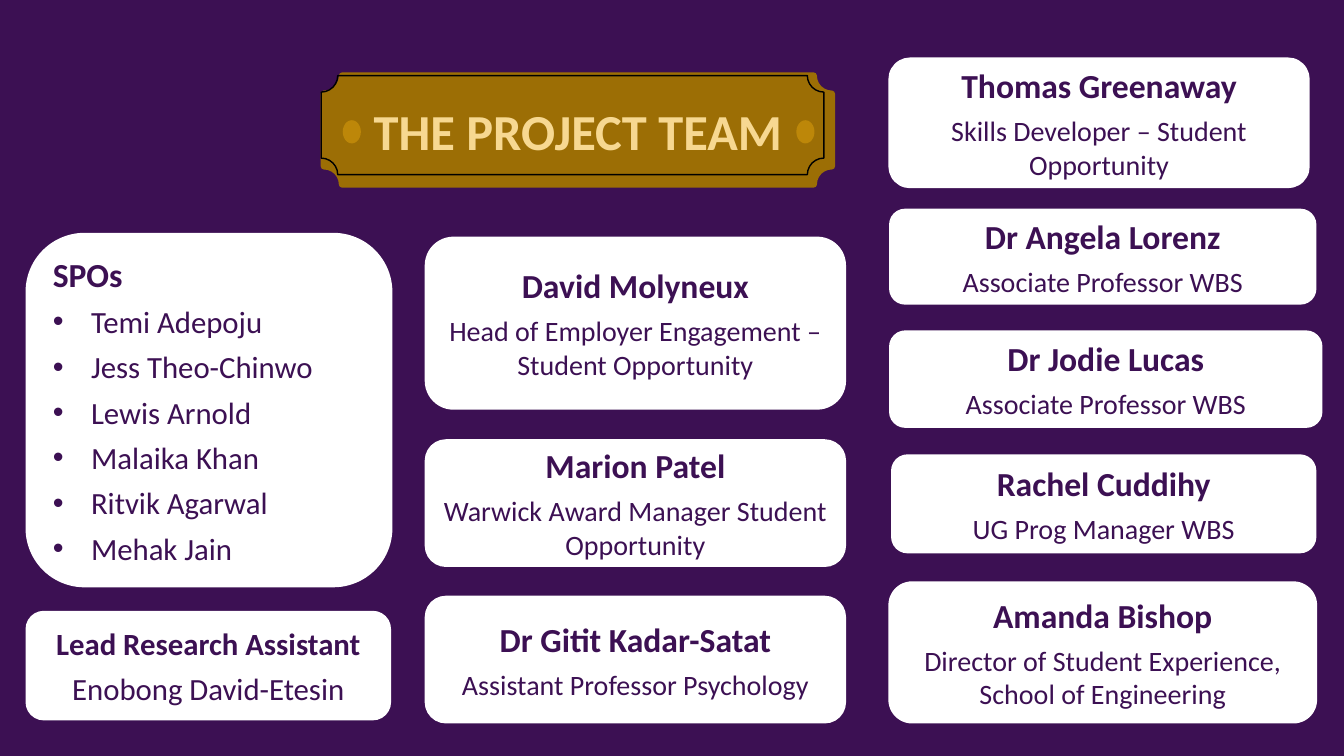
from lxml.etree import SubElement
from pptx import Presentation
from pptx.dml.color import RGBColor
from pptx.enum.shapes import MSO_SHAPE as Shape
from pptx.enum.text import MSO_ANCHOR as Anchor, PP_ALIGN as Align
from pptx.oxml.ns import qn
from pptx.util import Inches, Pt

PURPLE = RGBColor(0x3C, 0x10, 0x53)
WHITE = RGBColor(0xFF, 0xFF, 0xFF)
BRONZE = RGBColor(0x9C, 0x6E, 0x05)
GOLD = RGBColor(0xBD, 0x87, 0x09)
CREAM = RGBColor(0xF7, 0xD8, 0x91)
BLACK = RGBColor(0, 0, 0)

MIDDLE, RIGHT = 31.6, 66.15
CARD_WIDTH = 31.35
TEAM_CARDS = [
    (MIDDLE, 58.1, CARD_WIDTH, 16.9, "Marion Patel", "Warwick Award Manager Student Opportunity"),
    (RIGHT, 27.6, 31.8, 12.7, "Dr Angela Lorenz", "Associate Professor WBS"),
    (MIDDLE, 31.3, CARD_WIDTH, 22.9, "David Molyneux", "Head of Employer Engagement – Student Opportunity"),
    (RIGHT, 43.7, 32.25, 12.9, "Dr Jodie Lucas", "Associate Professor WBS"),
    (MIDDLE, 78.8, CARD_WIDTH, 16.9, "Dr Gitit Kadar-Satat", "Assistant Professor Psychology"),
    (66.1, 76.9, 31.9, 18.8, "Amanda Bishop", "Director of Student Experience, School of Engineering"),
    (66.3, 60.1, 31.65, 13.1, "Rachel Cuddihy", "UG Prog Manager WBS"),
    (66.1, 7.6, CARD_WIDTH, 17.3, "Thomas Greenaway", "Skills Developer – Student Opportunity"),
]
SPOS = ["Temi Adepoju", "Jess Theo-Chinwo", "Lewis Arnold",
        "Malaika Khan", "Ritvik Agarwal", "Mehak Jain"]


class TeamSlide:
    """Draws the team slide; lengths are percentages of the slide's size."""

    font_name = "Calibri"
    space_after = Pt(6)
    bullet_indent = Inches(0.38)

    def __init__(self, deck):
        self.width, self.height = deck.slide_width, deck.slide_height
        self.slide = deck.slides.add_slide(deck.slide_layouts[6])
        self.slide.background.fill.solid()
        self.slide.background.fill.fore_color.rgb = PURPLE

    def shape(self, kind, left, top, width, height, fill=None, line=None, weight=1):
        shape = self.slide.shapes.add_shape(
            kind, round(left * self.width / 100), round(top * self.height / 100),
            round(width * self.width / 100), round(height * self.height / 100))
        shape.shadow.inherit = False
        if fill is None:
            shape.fill.background()
        else:
            shape.fill.solid()
            shape.fill.fore_color.rgb = fill
        if line is None:
            shape.line.fill.background()
        else:
            shape.line.color.rgb = line
            shape.line.width = Pt(weight)
        return shape

    def label(self, shape, lines, color=PURPLE, align=Align.CENTER, bulleted=False):
        frame = shape.text_frame
        frame.word_wrap = True
        frame.vertical_anchor = Anchor.MIDDLE
        for index, (words, size) in enumerate(lines):
            paragraph = frame.add_paragraph() if index else frame.paragraphs[0]
            paragraph.text = words
            paragraph.alignment = align
            paragraph.space_after = self.space_after
            if bulleted and index:
                self.bullet(paragraph)
            font = paragraph.font
            font.name, font.size, font.bold = self.font_name, Pt(size), index == 0
            font.color.rgb = color

    def bullet(self, paragraph):
        properties = paragraph._p.get_or_add_pPr()
        properties.set("marL", str(self.bullet_indent))
        properties.set("indent", str(-self.bullet_indent))
        SubElement(properties, qn("a:buFont"), typeface="Arial")
        SubElement(properties, qn("a:buChar"), char="•")

    def card(self, left, top, width, height, lines, **style):
        card = self.shape(Shape.ROUNDED_RECTANGLE, left, top, width, height, WHITE)
        self.label(card, lines, **style)

    def title_plaque(self, title):
        plaque = self.shape(Shape.PLAQUE, 24.1, 10, 37.8, 14.4, BRONZE, BRONZE, 4.5)
        self.label(plaque, [(title, 36)], CREAM)
        for rivet_left in (25.5, 59.25):
            self.shape(Shape.OVAL, rivet_left, 15.9, 1.35, 3.07, GOLD)
        self.shape(Shape.PLAQUE, 23.9, 10, 37.4, 13.1, line=BLACK)


def main():
    deck = Presentation()
    deck.slide_width, deck.slide_height = Inches(13.33), Inches(7.5)
    team = TeamSlide(deck)
    for left, top, width, height, name, role in TEAM_CARDS:
        team.card(left, top, width, height, [(name, 24), (role, 20)])
    team.card(1.9, 30.8, 27.3, 46.9, [("SPOs", 24)] + [(spo, 22) for spo in SPOS],
              align=Align.LEFT, bulleted=True)
    team.card(1.9, 80.8, 27.2, 14.5,
              [("Lead Research Assistant", 22), ("Enobong David-Etesin", 22)])
    team.title_plaque("THE PROJECT TEAM")
    deck.save("out.pptx")


if __name__ == "__main__":
    main()
